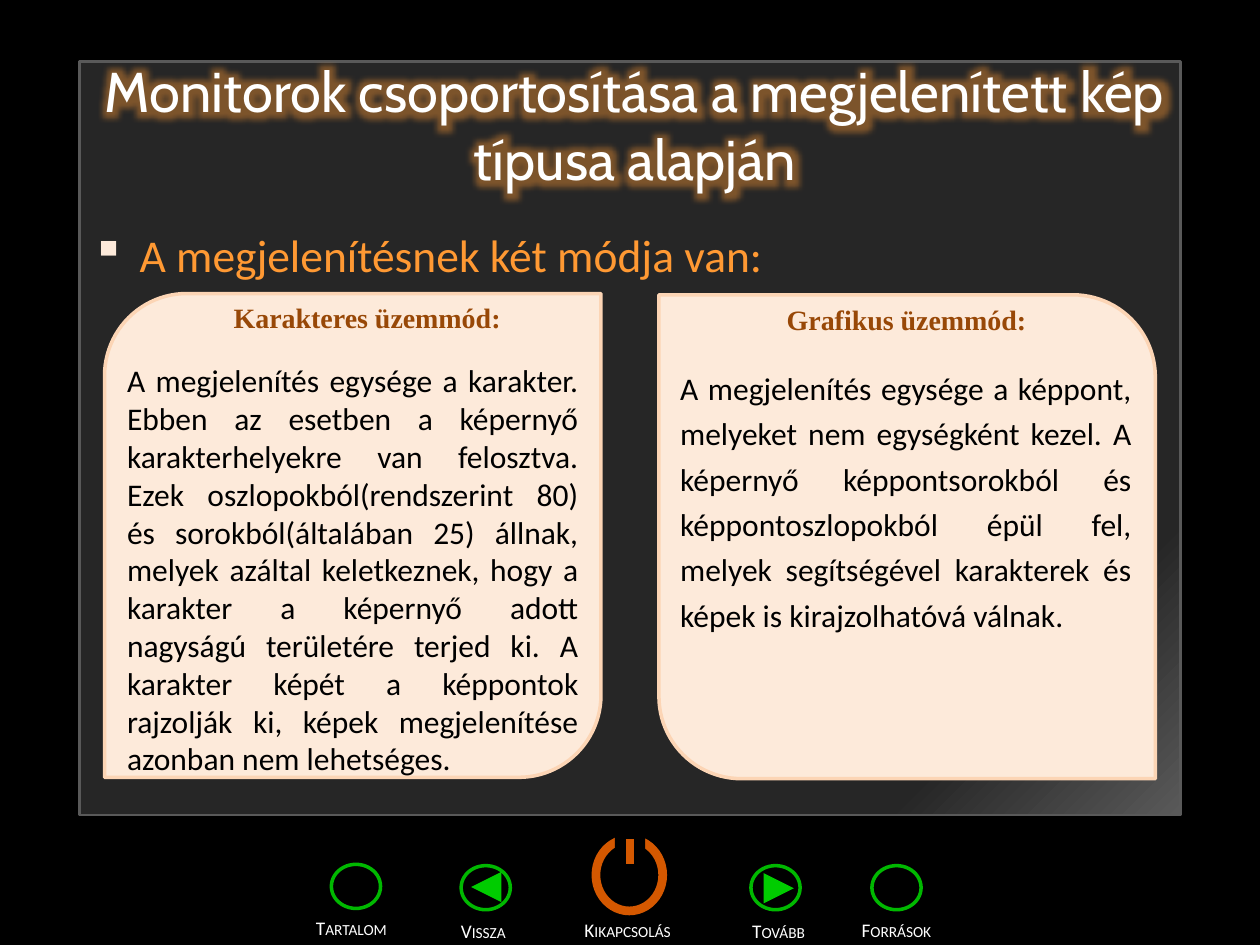
from lxml.etree import SubElement, fromstring
from pptx import Presentation
from pptx.dml.color import RGBColor
from pptx.enum.shapes import MSO_CONNECTOR, MSO_SHAPE
from pptx.enum.text import MSO_ANCHOR, PP_ALIGN
from pptx.oxml.ns import nsdecls, qn
from pptx.util import Inches, Pt

BLACK = RGBColor(0x00, 0x00, 0x00)
WHITE = RGBColor(0xFF, 0xFF, 0xFF)
PANEL = RGBColor(0x26, 0x26, 0x26)
PANEL_EDGE = RGBColor(0x59, 0x59, 0x59)
POWER = RGBColor(0xD4, 0x58, 0x00)
RING = RGBColor(0x00, 0xB8, 0x00)
ARROW = RGBColor(0x00, 0xCC, 0x00)
ORANGE = RGBColor(0xFF, 0x99, 0x33)
CREAM = RGBColor(0xFD, 0xEA, 0xDA)
CARD_EDGE = RGBColor(0xFC, 0xD5, 0xB5)
BROWN = RGBColor(0x98, 0x48, 0x07)

TITLE = "Monitorok csoportosítása a megjelenített kép típusa alapján"
LEAD = "A megjelenítésnek két módja van:"
# card box, rounded corners, heading and its box, body and its box, line spacing
CARDS = [
    ((0.83, 2.33, 3.94, 3.84), (0.17, 0),
     "Karakteres üzemmód:", (1.3, 2.34, 3.23, 0.37),
     "A megjelenítés egysége a karakter. Ebben az esetben a képernyő "
     "karakterhelyekre van felosztva. Ezek oszlopokból(rendszerint 80) és "
     "sorokból(általában 25) állnak, melyek azáltal keletkeznek, hogy a "
     "karakter a képernyő adott nagyságú területére terjed ki. A karakter "
     "képét a képpontok rajzolják ki, képek megjelenítése azonban nem "
     "lehetséges.", (0.91, 2.82, 3.78, 3.43), None),
    ((5.23, 2.34, 3.94, 3.84), (0, 0.17),
     "Grafikus üzemmód:", (5.5, 2.35, 3.39, 0.37),
     "A megjelenítés egysége a képpont, melyeket nem egységként kezel. A "
     "képernyő képpontsorokból és képpontoszlopokból épül fel, melyek "
     "segítségével karakterek és képek is kirajzolhatóvá válnak.",
     (5.3, 2.82, 3.78, 2.28), 1.2),
]
RINGS = [(2.63, 6.86), (3.66, 6.87), (5.96, 6.87), (6.92, 6.87)]
ARROWS = [(3.74, 6.92, 270), (6.06, 6.93, 90)]
# text, left, top, width, alignment
LABELS = [
    ("Tartalom", 2.41, 7.22, 0.83, PP_ALIGN.LEFT),
    ("Vissza", 3.56, 7.25, 0.59, PP_ALIGN.LEFT),
    ("Kikapcsolás", 4.54, 7.24, 0.98, PP_ALIGN.LEFT),
    ("Tovább", 5.81, 7.25, 0.69, PP_ALIGN.CENTER),
    ("Források", 6.74, 7.24, 0.76, PP_ALIGN.LEFT),
]

prs = Presentation()
prs.slide_width, prs.slide_height = Inches(10), Inches(7.5)
s = prs.slides.add_slide(prs.slide_layouts[6])
s.background.fill.solid()
s.background.fill.fore_color.rgb = BLACK


def add_shape(kind, box, fill=None, edge=None, width=0):
    sp = s.shapes.add_shape(kind, *map(Inches, box))
    sp.shadow.inherit = False
    if fill is None:
        sp.fill.background()
    else:
        sp.fill.solid()
        sp.fill.fore_color.rgb = fill
    if edge is None:
        sp.line.fill.background()
    else:
        sp.line.color.rgb = edge
        sp.line.width = Pt(width)
    return sp


def add_text(text, box, size, color, font="Calibri", align=PP_ALIGN.LEFT):
    """Add a one-paragraph text box; return its frame, paragraph and run."""
    tf = s.shapes.add_textbox(*map(Inches, box)).text_frame
    tf.word_wrap = True
    p = tf.paragraphs[0]
    p.alignment = align
    r = p.add_run()
    r.text = text
    r.font.size, r.font.name = Pt(size), font
    r.font.color.rgb = color
    return tf, p, r


def add_glow(r, color, radius, alpha):
    glow = fromstring(
        f'<a:effectLst {nsdecls("a")}><a:glow rad="{Pt(radius)}">'
        f'<a:srgbClr val="{color}"><a:alpha val="{alpha * 1000}"/></a:srgbClr>'
        '</a:glow></a:effectLst>')
    r.font._element.find(qn("a:solidFill")).addnext(glow)


def add_bullet(p, char, color, indent):
    pPr = p._p.get_or_add_pPr()
    pPr.set("marL", str(Inches(indent)))
    pPr.set("indent", str(-Inches(indent)))
    clr = SubElement(pPr, qn("a:buClr"))
    SubElement(clr, qn("a:srgbClr")).set("val", str(color))
    SubElement(pPr, qn("a:buChar")).set("char", char)


# Panel
panel = add_shape(MSO_SHAPE.RECTANGLE, (0.63, 0.49, 8.74, 5.98), PANEL, PANEL_EDGE, 1.5)
panel.fill.gradient()
panel.fill.gradient_angle = 315
for stop, (position, color) in zip(panel.fill.gradient_stops,
                                   [(0.84, PANEL), (1, PANEL_EDGE)]):
    stop.position = position
    stop.color.rgb = color

# Navigation bar
add_shape(MSO_SHAPE.OVAL, (4.73, 6.66, 0.53, 0.57), None, POWER, 5)
for x, y in RINGS:
    add_shape(MSO_SHAPE.OVAL, (x, y, 0.39, 0.35), None, RING, 2)
add_shape(MSO_SHAPE.RECTANGLE, (4.88, 6.57, 0.24, 0.18), BLACK)
bar = s.shapes.add_connector(MSO_CONNECTOR.STRAIGHT, Inches(5), Inches(6.66),
                             Inches(5), Inches(6.86))
bar.line.color.rgb, bar.line.width = POWER, Pt(5)
SubElement(bar._element.spPr, qn("a:effectLst"))
for x, y, angle in ARROWS:
    add_shape(MSO_SHAPE.FLOWCHART_EXTRACT, (x, y, 0.24, 0.24), ARROW).rotation = angle
for text, x, y, w, align in LABELS:
    tf, p, r = add_text(text, (x, y, w, 0.29), 11, WHITE, align=align)
    tf.margin_right = Inches(0.05)
    r.font._element.set("cap", "small")

# Title and lead line
tf, p, r = add_text(TITLE, (0.67, 0.36, 8.74, 1.25), 32, WHITE, "Cabin", PP_ALIGN.CENTER)
tf.vertical_anchor = MSO_ANCHOR.MIDDLE
add_glow(r, ORANGE, 18, 40)
tf, p, r = add_text(LEAD, (0.63, 1.75, 8.74, 4.72), 26, ORANGE)
p.space_before = Pt(5)
add_bullet(p, "▪", CREAM, 0.38)

# Cards
for box, corners, heading, heading_box, body, body_box, spacing in CARDS:
    card = add_shape(MSO_SHAPE.ROUND_2_DIAG_RECTANGLE, box, CREAM, CARD_EDGE, 2)
    card.adjustments[0], card.adjustments[1] = corners
    tf, p, r = add_text(heading, heading_box, 16, BROWN, "Times New Roman", PP_ALIGN.CENTER)
    r.font.bold = True
    tf, p, r = add_text(body, body_box, 18, BLACK, align=PP_ALIGN.JUSTIFY)
    if spacing:
        p.line_spacing = spacing

prs.save("out.pptx")
